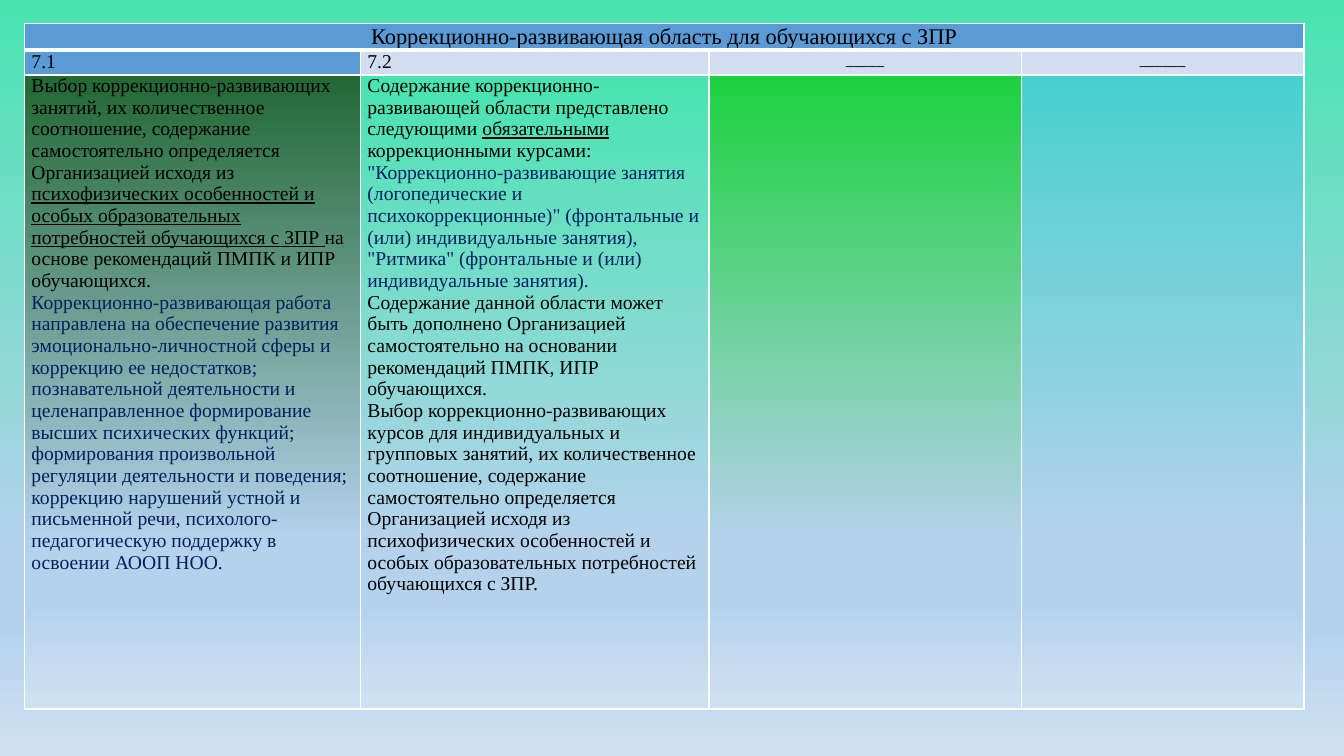
from dataclasses import dataclass

import lxml.etree
import pptx
import pptx.dml.color
import pptx.enum.text
import pptx.oxml
import pptx.oxml.ns
import pptx.util

Pt = pptx.util.Pt
RGBColor = pptx.dml.color.RGBColor
qn = pptx.oxml.ns.qn


@dataclass(frozen=True)
class Theme:
    serif: str = "Times New Roman"
    sans: str = "Calibri"
    heading_size: int = 16
    body_size: int = 14
    dash_size: int = 11
    ink: str = "000000"
    accent: str = "002060"
    border: str = "FFFFFF"
    header: str = "5B9BD5"
    subheader: str = "D2DEEF"
    mint: str = "48E4B0"
    forest: str = "226834"
    green: str = "1CD23F"
    turquoise: str = "47D1CE"
    fade: tuple = ((74, "B5D2EC"), (83, "B5D2EC"), (100, "CEE1F2"))


THEME = Theme()

COLUMN_WIDTHS = (240, 249, 223, 202)
ROW_HEIGHTS = (18, 18, 453)

VARIANT_71 = [
    (THEME.ink, [
        ("Выбор коррекционно-развивающих занятий, их количественное соотношение, "
         "содержание самостоятельно определяется Организацией исходя из ", False),
        ("психофизических особенностей и особых образовательных потребностей "
         "обучающихся с ЗПР ", True),
        ("на основе рекомендаций ПМПК и ИПР обучающихся.", False),
    ]),
    (THEME.accent, [
        ("Коррекционно-развивающая работа направлена на обеспечение развития "
         "эмоционально-личностной сферы и коррекцию ее недостатков; познавательной "
         "деятельности и целенаправленное формирование высших психических функций; "
         "формирования произвольной регуляции деятельности и поведения; коррекцию "
         "нарушений устной и письменной речи, психолого-педагогическую поддержку "
         "в освоении АООП НОО.", False),
    ]),
]

VARIANT_72 = [
    (THEME.ink, [
        ("Содержание коррекционно-развивающей области представлено следующими ", False),
        ("обязательными ", True),
        ("коррекционными курсами:", False),
    ]),
    (THEME.accent, [
        ('"Коррекционно-развивающие занятия (логопедические и психокоррекционные)" '
         '(фронтальные и (или) индивидуальные занятия), "Ритмика" (фронтальные и (или) '
         "индивидуальные занятия).", False),
    ]),
    (THEME.ink, [
        ("Содержание данной области может быть дополнено Организацией самостоятельно "
         "на основании рекомендаций ПМПК, ИПР обучающихся.", False),
    ]),
    (THEME.ink, [
        ("Выбор коррекционно-развивающих курсов для индивидуальных и групповых занятий, "
         "их количественное соотношение, содержание самостоятельно определяется "
         "Организацией исходя из психофизических особенностей и особых образовательных "
         "потребностей обучающихся с ЗПР.", False),
    ]),
]


def fill_gradient(fill, owner, start):
    fill.gradient()
    fill.gradient_angle = 270
    stops = owner.find(".//" + qn("a:gsLst"))
    for stop in list(stops):
        stops.remove(stop)
    for percent, colour in ((0, start), *THEME.fade):
        stop = lxml.etree.SubElement(stops, qn("a:gs"), pos=str(percent * 1000))
        lxml.etree.SubElement(stop, qn("a:srgbClr"), val=colour)


def fill_solid(cell, colour):
    cell.fill.solid()
    cell.fill.fore_color.rgb = RGBColor.from_string(colour)


def set_borders(cell, bottom=1, top=1):
    properties = cell._tc.get_or_add_tcPr()
    sides = (("lnL", 1), ("lnR", 1), ("lnT", top), ("lnB", bottom))
    for position, (side, width) in enumerate(sides):
        line = pptx.oxml.parse_xml(
            f'<a:{side} {pptx.oxml.ns.nsdecls("a")} w="{Pt(width)}"><a:solidFill>'
            f'<a:srgbClr val="{THEME.border}"/></a:solidFill></a:{side}>')
        properties.insert(position, line)


def set_margins(cell):
    cell.margin_left = cell.margin_right = Pt(5)
    cell.margin_top = cell.margin_bottom = 0


def style_paragraph(paragraph, size, font=THEME.serif, colour=THEME.ink):
    paragraph.font.name = font
    paragraph.font.size = Pt(size)
    paragraph.font.bold = False
    paragraph.font.color.rgb = RGBColor.from_string(colour)


def write_label(cell, label, size, font=THEME.serif, centred=False):
    paragraph = cell.text_frame.paragraphs[0]
    paragraph.text = label
    paragraph.line_spacing = 1.07
    if centred:
        paragraph.alignment = pptx.enum.text.PP_ALIGN.CENTER
    style_paragraph(paragraph, size, font)


def write_description(cell, passages):
    frame = cell.text_frame
    for index, (colour, phrases) in enumerate(passages):
        paragraph = frame.add_paragraph() if index else frame.paragraphs[0]
        style_paragraph(paragraph, THEME.body_size, colour=colour)
        for phrase, underlined in phrases:
            run = paragraph.add_run()
            run.text = phrase
            if underlined:
                run.font.underline = True


def add_grid(slide):
    grid = slide.shapes.add_table(
        len(ROW_HEIGHTS), len(COLUMN_WIDTHS), Pt(17.5), Pt(16.5),
        Pt(sum(COLUMN_WIDTHS)), Pt(sum(ROW_HEIGHTS))).table
    for column, width in zip(grid.columns, COLUMN_WIDTHS):
        column.width = Pt(width)
    for row, height in zip(grid.rows, ROW_HEIGHTS):
        row.height = Pt(height)
    for cell in grid.iter_cells():
        set_margins(cell)
    return grid


def main():
    presentation = pptx.Presentation()
    presentation.slide_width = Pt(960)
    presentation.slide_height = Pt(540)
    slide = presentation.slides.add_slide(presentation.slide_layouts[6])
    fill_gradient(slide.background.fill, slide.element, THEME.mint)

    grid = add_grid(slide)
    heading = grid.cell(0, 0)
    heading.merge(grid.cell(0, len(COLUMN_WIDTHS) - 1))
    write_label(heading, "Коррекционно-развивающая область для обучающихся с ЗПР",
                THEME.heading_size, centred=True)

    write_label(grid.cell(1, 0), "7.1", THEME.body_size)
    write_label(grid.cell(1, 1), "7.2", THEME.body_size)
    write_label(grid.cell(1, 2), "_____", THEME.dash_size, THEME.sans, centred=True)
    write_label(grid.cell(1, 3), "______", THEME.dash_size, THEME.sans, centred=True)
    write_description(grid.cell(2, 0), VARIANT_71)
    write_description(grid.cell(2, 1), VARIANT_72)

    subheader_fills = (THEME.header,) + (THEME.subheader,) * 3
    description_fills = (THEME.forest, THEME.mint, THEME.green, THEME.turquoise)
    for column, (subheader, start) in enumerate(zip(subheader_fills, description_fills)):
        title, variant, description = (grid.cell(row, column) for row in range(3))
        fill_solid(title, THEME.header)
        fill_solid(variant, subheader)
        fill_gradient(description.fill, description._tc, start)
        set_borders(title, bottom=3)
        set_borders(variant, top=3)
        set_borders(description)

    presentation.save("out.pptx")


if __name__ == "__main__":
    main()
